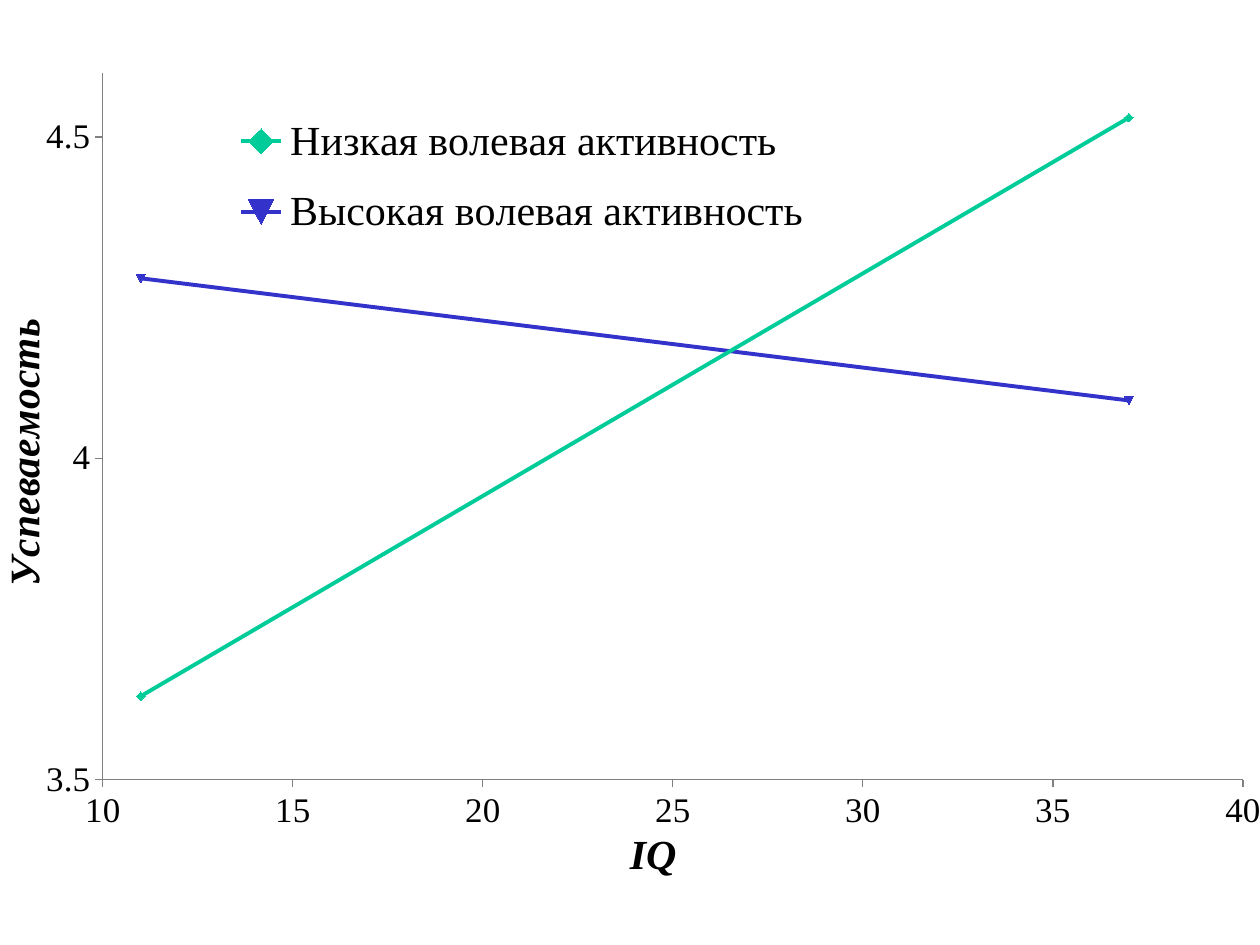
from lxml.etree import SubElement
from pptx import Presentation
from pptx.chart.data import XyChartData
from pptx.dml.color import RGBColor
from pptx.enum.chart import (XL_CHART_TYPE, XL_LEGEND_POSITION, XL_MARKER_STYLE,
                             XL_TICK_LABEL_POSITION, XL_TICK_MARK)
from pptx.oxml.ns import qn
from pptx.util import Inches, Pt

BLACK = RGBColor(0x00, 0x00, 0x00)
GRAY = RGBColor(0x80, 0x80, 0x80)
GREEN = RGBColor(0x00, 0xCC, 0x99)
BLUE = RGBColor(0x33, 0x33, 0xCC)
FONT = "Times New Roman"

IQ_VALUES = (11, 37)
SERIES = [
    ("Низкая волевая активность", (3.63, 4.53), GREEN, XL_MARKER_STYLE.DIAMOND),
    ("Высокая волевая активность", (4.28, 4.09), BLUE, XL_MARKER_STYLE.AUTOMATIC),
]


def set_font(font, size, **styles):
    font.color.rgb = BLACK
    for name, value in {"name": FONT, "size": Pt(size), **styles}.items():
        setattr(font, name, value)


def set_layout(element, **values):
    """Give a chart part a manual layout in fractions of the chart."""
    layout = element.find(qn("c:layout"))
    if layout is None:
        layout = element.makeelement(qn("c:layout"))
        overlay = element.find(qn("c:overlay"))
        if overlay is None:
            element.insert(0, layout)
        else:
            overlay.addprevious(layout)
    manual = SubElement(layout, qn("c:manualLayout"))
    for name, value in values.items():
        SubElement(manual, qn(f"c:{name}")).set("val", str(value))


def format_axis(axis, title, limits, x, y):
    for name, value in limits.items():
        setattr(axis, name, value)
    axis.has_major_gridlines = False
    axis.major_tick_mark = XL_TICK_MARK.OUTSIDE
    axis.minor_tick_mark = XL_TICK_MARK.NONE
    axis.tick_label_position = XL_TICK_LABEL_POSITION.NEXT_TO_AXIS
    axis.format.line.color.rgb = GRAY
    axis.format.line.width = Pt(0.75)
    set_font(axis.tick_labels.font, 20, bold=False)
    axis.tick_labels.number_format = "General"
    axis.tick_labels.number_format_is_linked = False

    paragraph = axis.axis_title.text_frame.paragraphs[0]
    run = paragraph.add_run()
    run.text = title
    set_font(run.font, 24, bold=True, italic=True)
    set_layout(axis.axis_title._element, xMode="edge", yMode="edge", x=x, y=y)


def add_performance_chart(slide, left, top, width, height):
    data = XyChartData()
    for name, values, _, _ in SERIES:
        series = data.add_series(name)
        for point in zip(IQ_VALUES, values):
            series.add_data_point(*point)
    chart = slide.shapes.add_chart(
        XL_CHART_TYPE.XY_SCATTER_LINES, left, top, width, height, data).chart
    chart.has_title = False
    set_font(chart.font, 10)

    # Lines and markers
    plot = chart.plots[0]
    plot.vary_by_categories = False
    for series, (_, _, color, marker) in zip(plot.series, SERIES):
        series.smooth = False
        series.format.line.color.rgb = color
        series.format.line.width = Pt(2.25)
        series.marker.style = marker
        series.marker.size = 5
        series.marker.format.fill.solid()
        series.marker.format.fill.fore_color.rgb = color
        series.marker.format.line.color.rgb = color

    # Axes
    format_axis(chart.category_axis, "IQ",
                {"minimum_scale": 10, "maximum_scale": 40, "major_unit": 5}, 0.494, 0.93)
    format_axis(chart.value_axis, "Успеваемость",
                {"minimum_scale": 3.5, "maximum_scale": 4.6, "major_unit": 0.5}, 0, 0.318)

    # Legend over the plot
    chart.has_legend = True
    legend = chart.legend
    legend.position = XL_LEGEND_POSITION.RIGHT
    legend.include_in_layout = True
    set_font(legend.font, 24)
    set_layout(legend._element, xMode="edge", yMode="edge", x=0.176, y=0.05, w=0.48, h=0.2)

    # Plot area
    plot_area = chart._chartSpace.chart.plotArea
    set_layout(plot_area, layoutTarget="inner", xMode="edge", yMode="edge",
               x=0.089, y=0.024, w=0.889, h=0.858)


def main():
    presentation = Presentation()
    presentation.slide_width, presentation.slide_height = Inches(10), Inches(7.5)
    slide = presentation.slides.add_slide(presentation.slide_layouts[6])
    add_performance_chart(slide, Inches(-0.09), Inches(0.42), Inches(10.18), Inches(6.65))
    presentation.save("out.pptx")


if __name__ == "__main__":
    main()
